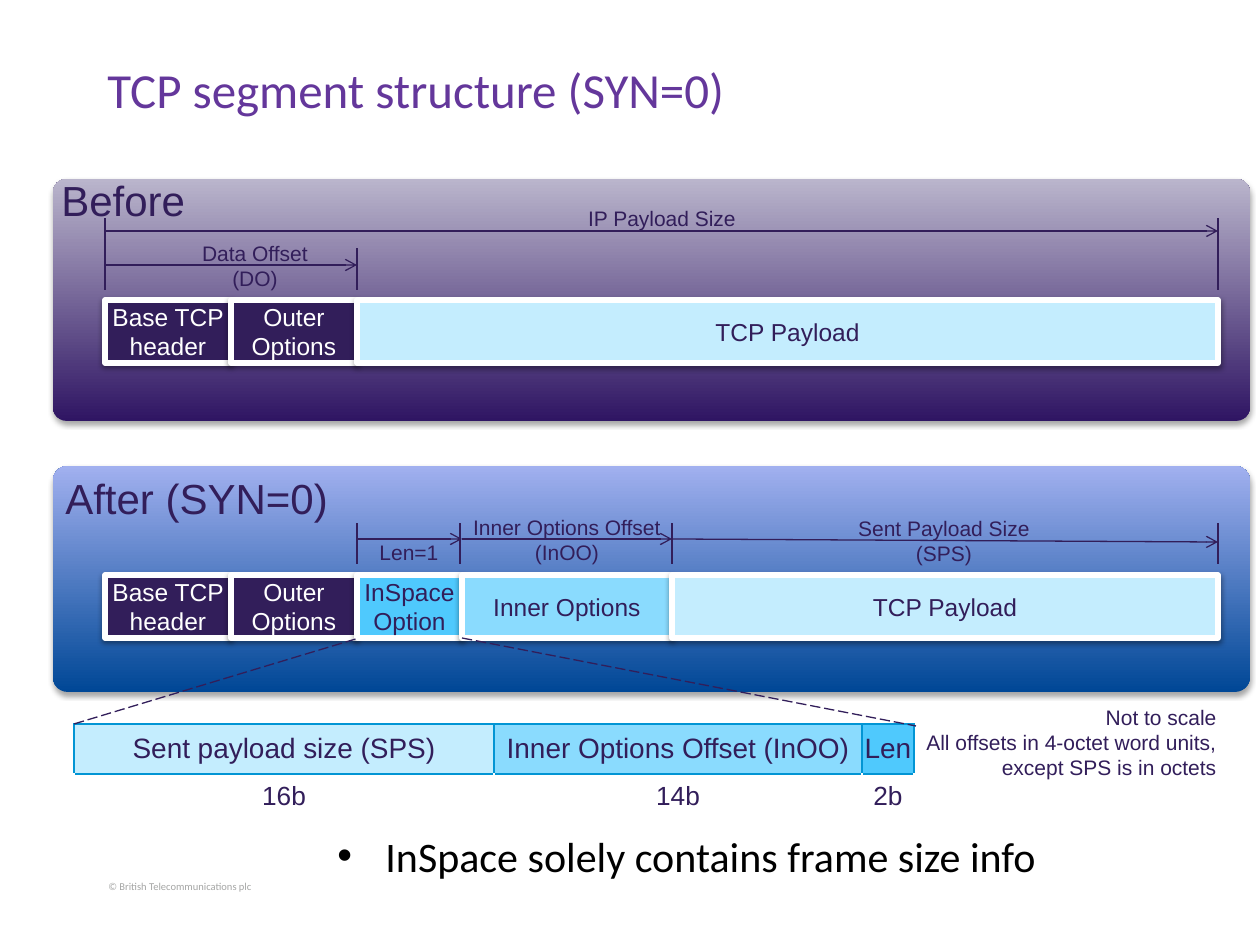
from itertools import pairwise

from lxml.etree import SubElement
from pptx import Presentation
from pptx.dml.color import RGBColor
from pptx.enum.dml import MSO_LINE
from pptx.enum.shapes import MSO_CONNECTOR, MSO_SHAPE
from pptx.enum.text import MSO_ANCHOR as Anchor, PP_ALIGN as Align
from pptx.oxml.ns import qn
from pptx.util import Emu, Pt

INK = RGBColor(0x32, 0x1E, 0x5A)
WHITE = RGBColor(0xFF, 0xFF, 0xFF)
BLACK = RGBColor(0x00, 0x00, 0x00)
GREY = RGBColor(0xA5, 0xA6, 0xA5)
PURPLE = RGBColor(0x64, 0x37, 0x9B)
PALE = RGBColor(0xC4, 0xED, 0xFE)
SKY = RGBColor(0x8A, 0xDB, 0xFE)
BRIGHT = RGBColor(0x4F, 0xC9, 0xFD)
RULE = RGBColor(0x02, 0x95, 0xD4)
BEFORE_DARK = RGBColor(0x2F, 0x15, 0x63)
BEFORE_LIGHT = RGBColor(0xBA, 0xB5, 0xCC)
AFTER_DARK = RGBColor(0x00, 0x47, 0x96)
AFTER_LIGHT = RGBColor(0xA1, 0xB0, 0xEF)


def px(length):
    return Emu(round(length * 914400 / 126))


class SegmentSlide:
    """Draws styled elements on one slide, measured in px."""

    def __init__(self, slide):
        self.shapes = slide.shapes

    def set_text(self, frame, text, size, color=INK, font="Arial", align=Align.CENTER):
        frame.text = text
        for paragraph in frame.paragraphs:
            paragraph.alignment = align
            for run in paragraph.runs:
                run.font.size = Pt(size)
                run.font.name = font
                run.font.color.rgb = color

    def label(self, x, y, w, h, text, size=12, anchor=Anchor.TOP, wrap=False, **style):
        frame = self.shapes.add_textbox(px(x), px(y), px(w), px(h)).text_frame
        frame.word_wrap = wrap
        frame.vertical_anchor = anchor
        self.set_text(frame, text, size, **style)
        return frame

    def bullet(self, x, y, w, h, text, size, **style):
        frame = self.label(x, y, w, h, text, size, Anchor.MIDDLE, True,
                           align=Align.LEFT, **style)
        props = frame.paragraphs[0]._p.get_or_add_pPr()
        props.set("marL", str(px(48)))
        props.set("indent", str(-px(48)))
        SubElement(props, qn("a:buFont"), typeface="Arial")
        SubElement(props, qn("a:buChar"), char="•")

    def shadow(self, shape, opacity, distance):
        shape.shadow.inherit = False
        effects = shape._element.spPr.find(qn("a:effectLst"))
        outer = SubElement(effects, qn("a:outerShdw"), blurRad=str(Pt(3.1)),
                           dist=str(Pt(distance)), dir="5400000", rotWithShape="0")
        tint = SubElement(outer, qn("a:srgbClr"), val="000000")
        SubElement(tint, qn("a:alpha"), val=str(opacity * 1000))

    def panel(self, y, h, dark, light, corner):
        panel = self.shapes.add_shape(MSO_SHAPE.ROUNDED_RECTANGLE,
                                      px(53), px(y), px(1197), px(h))
        panel.adjustments[0] = corner
        panel.fill.gradient()
        panel.fill.gradient_angle = 90
        for stop, color in zip(panel.fill.gradient_stops, (dark, light)):
            stop.color.rgb = color
        panel.line.fill.background()
        self.shadow(panel, 35, 1.8)

    def field(self, left, right, y, text, fill, color):
        field = self.shapes.add_shape(MSO_SHAPE.RECTANGLE,
                                      px(left), px(y), px(right - left), px(63))
        field.fill.solid()
        field.fill.fore_color.rgb = fill
        field.line.color.rgb = WHITE
        field.line.width = Pt(3)
        self.shadow(field, 38, 1.6)
        frame = field.text_frame
        frame.margin_left = frame.margin_right = 0
        frame.word_wrap = True
        frame.vertical_anchor = Anchor.MIDDLE
        self.set_text(frame, text, 14, color)

    def segment(self, y, edges, fields):
        for (left, right), field in zip(pairwise(edges), fields):
            self.field(left, right, y, *field)

    def line(self, x1, y1, x2, y2, arrow=False, dashed=False):
        line = self.shapes.add_connector(MSO_CONNECTOR.STRAIGHT,
                                         px(x1), px(y1), px(x2), px(y2))
        line.line.color.rgb = INK
        line.line.width = Pt(0.75)
        if dashed:
            line.line.dash_style = MSO_LINE.LONG_DASH
        if arrow:
            outline = line._element.spPr.find(qn("a:ln"))
            SubElement(outline, qn("a:tailEnd"), type="arrow")
        SubElement(line._element.spPr, qn("a:effectLst"))

    def borders(self, cell, sides):
        props = cell._tc.get_or_add_tcPr()
        for side in sides:
            edge = SubElement(props, qn(f"a:ln{side}"), w=str(Pt(1)))
            paint = SubElement(edge, qn("a:solidFill"))
            SubElement(paint, qn("a:srgbClr"), val=str(RULE))

    def option_table(self, x, y, columns, heights):
        widths = [column[0] for column in columns]
        table = self.shapes.add_table(2, len(columns), px(x), px(y),
                                      px(sum(widths)), px(sum(heights))).table
        table.first_row = table.horz_banding = False
        for row, height in zip(table.rows, heights):
            row.height = px(height)
        for index, (width, name, bits, fill) in enumerate(columns):
            table.columns[index].width = px(width)
            for row, (text, size, sides) in enumerate(((name, 16, "LRTB"), (bits, 15, "T"))):
                cell = table.cell(row, index)
                cell.margin_left = cell.margin_right = 0
                cell.margin_top = cell.margin_bottom = 0
                cell.vertical_anchor = Anchor.MIDDLE
                self.borders(cell, sides)
                self.set_text(cell.text_frame, text, size)
            table.cell(0, index).fill.solid()
            table.cell(0, index).fill.fore_color.rgb = fill
            table.cell(1, index).fill.background()


def main():
    deck = Presentation()
    deck.slide_width, deck.slide_height = px(1260), px(945)
    page = SegmentSlide(deck.slides.add_slide(deck.slide_layouts[6]))

    start, outer, inspace, inner, payload, end = 105, 231, 357, 462, 672, 1218
    header = [("Base TCP header", INK, WHITE), ("Outer Options", INK, WHITE)]
    data = ("TCP Payload", PALE, INK)

    page.label(96, 874, 190, 44, "© British Telecommunications plc", 6,
               color=GREY, font="Calibri", align=Align.LEFT)
    page.panel(466, 226, AFTER_DARK, AFTER_LIGHT, 0.065)
    page.panel(179, 242, BEFORE_DARK, BEFORE_LIGHT, 0.056)
    page.label(95, 53, 1071, 136, "TCP segment structure (SYN=0)", 28, wrap=True,
               color=PURPLE, font="Calibri", align=Align.LEFT)

    page.option_table(74, 724, [
        (420, "Sent payload size (SPS)", "16b", PALE),
        (368, "Inner Options Offset (InOO)", "14b", SKY),
        (52, "Len", "2b", BRIGHT),
    ], (50, 44))

    page.segment(575, (start, outer, inspace, inner, payload, end), header + [
        ("InSpace Option", BRIGHT, INK), ("Inner Options", SKY, INK), data])
    page.segment(300, (start, outer, inspace, end), header + [data])

    for x1, y1, x2, y2 in ((inspace, 539, inner, 539), (inner, 539, payload, 539),
                           (payload, 539, end, 542), (start, 265, inspace, 265),
                           (start, 231, end, 231)):
        page.line(x1, y1, x2, y2, arrow=True)
    for x in (inspace, 460, payload, end):
        page.line(x, 564, x, 523)
    for x, top in ((inspace, 248), (end, 218), (start, 218)):
        page.line(x, 290, x, top)
    page.line(74, 724, 359, 638, dashed=True)
    page.line(inner, 638, 916, 726, dashed=True)

    for x, y, w, h, text in (
        (367, 533, 84, 38, "Len=1"),
        (460, 508, 214, 63, "Inner Options Offset\v(InOO)"),
        (845, 509, 198, 63, "Sent Payload Size\v(SPS)"),
        (189, 234, 132, 63, "Data Offset\v(DO)"),
        (575, 199, 174, 38, "IP Payload Size"),
    ):
        page.label(x, y, w, h, text)
    page.label(910, 698, 319, 90,
               "Not to scale\nAll offsets in 4-octet word units,\vexcept SPS is in octets",
               align=Align.RIGHT)
    page.label(49, 168, 150, 63, "Before", 24, align=Align.LEFT)
    page.label(53, 466, 291, 63, "After (SYN=0)", 24, align=Align.LEFT)
    page.bullet(325, 819, 840, 73, "InSpace solely contains frame size info", 24,
                color=BLACK, font="Calibri")

    deck.save("out.pptx")


if __name__ == "__main__":
    main()
